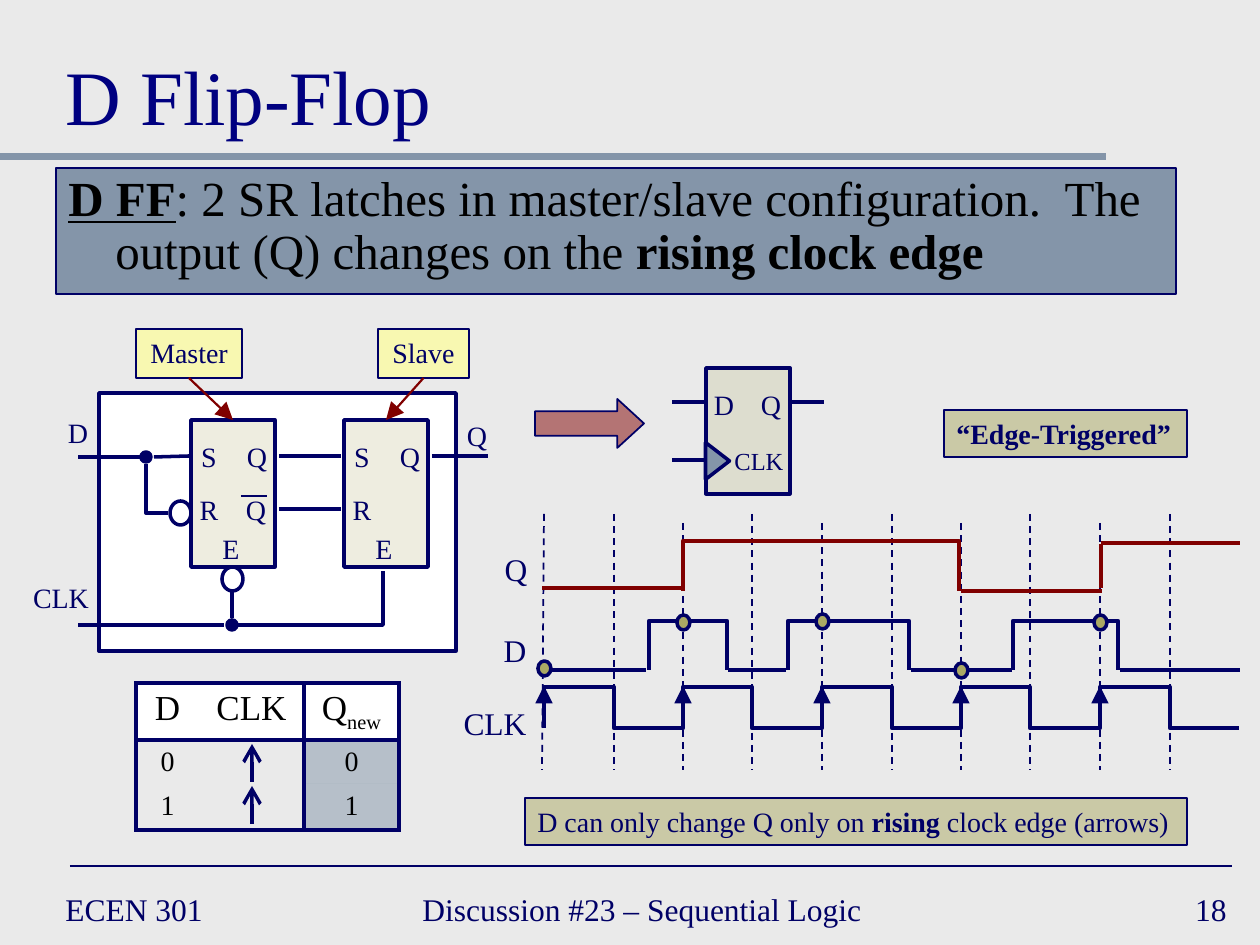
from dataclasses import dataclass

from lxml import etree
from pptx import Presentation
from pptx.dml.color import RGBColor
from pptx.enum.dml import MSO_LINE
from pptx.enum.shapes import MSO_CONNECTOR, MSO_SHAPE
from pptx.enum.text import MSO_ANCHOR, PP_ALIGN
from pptx.oxml.ns import qn
from pptx.util import Emu, Pt

RECT, OVAL = MSO_SHAPE.RECTANGLE, MSO_SHAPE.OVAL
TRIANGLE, RIGHT_ARROW = MSO_SHAPE.ISOSCELES_TRIANGLE, MSO_SHAPE.RIGHT_ARROW
STRAIGHT, DASH = MSO_CONNECTOR.STRAIGHT, MSO_LINE.DASH
LEFT, CENTER, RIGHT = PP_ALIGN.LEFT, PP_ALIGN.CENTER, PP_ALIGN.RIGHT
TOP, MIDDLE, BOTTOM = MSO_ANCHOR.TOP, MSO_ANCHOR.MIDDLE, MSO_ANCHOR.BOTTOM
PX = 914400 / 126


@dataclass(frozen=True)
class Theme:
    font: str = "Times New Roman"
    page: str = "EAEAEA"
    navy: str = "000066"
    title: str = "000080"
    slate: str = "8495A9"
    red: str = "800000"
    olive: str = "ABA964"
    yellow: str = "FFFF99"
    white: str = "FFFFFF"
    black: str = "000000"
    title_size: int = 44
    body_size: int = 28
    header_size: int = 20
    signal_size: int = 18
    label_size: int = 16
    small_size: int = 14


T = Theme()


def px(n):
    return Emu(round(n * PX))


def rgb(color):
    return RGBColor.from_string(color)


def paint(fill, xml, color, alpha=100):
    if color is None:
        fill.background()
        return
    fill.solid()
    fill.fore_color.rgb = rgb(color)
    if alpha < 100:
        clr = xml.find(qn("a:solidFill")).find(qn("a:srgbClr"))
        etree.SubElement(clr, qn("a:alpha")).set("val", str(alpha * 1000))


def write(tf, runs, size=T.label_size, color=T.navy, align=LEFT, anchor=TOP,
          wrap=False, hang=0, spacing=None):
    tf.word_wrap = wrap
    tf.vertical_anchor = anchor
    p = tf.paragraphs[0]
    p.alignment = align
    if spacing:
        p.line_spacing = spacing
    if hang:
        pPr = p._p.get_or_add_pPr()
        pPr.set("marL", str(px(hang)))
        pPr.set("indent", str(-px(hang)))
    for text, style in [(runs, "")] if isinstance(runs, str) else runs:
        r = p.add_run()
        r.text = text
        r.font.name = T.font
        r.font.size = Pt(size)
        r.font.color.rgb = rgb(color)
        r.font.bold = "b" in style
        r.font.underline = "u" in style
        if "s" in style:
            r.font._element.set("baseline", "-25000")


def add_text(s, box, runs, **fmt):
    write(s.shapes.add_textbox(*map(px, box)).text_frame, runs, **fmt)


def add_label(s, x, y, text, size=T.label_size):
    width = 26 + 22 * len(text)
    add_text(s, (x - width // 2, y, width, 46), text, size=size, align=CENTER)


def outline(sp, color, width):
    sp.line.color.rgb = rgb(color)
    sp.line.width = Pt(width)
    sp.shadow.inherit = False


def add_box(s, kind, box, color=None, alpha=100, width=2):
    sp = s.shapes.add_shape(kind, *map(px, box))
    paint(sp.fill, sp._element.spPr, color, alpha)
    outline(sp, T.navy, width)
    return sp


def add_line(s, x1, y1, x2, y2, color=T.navy, width=2, dash=None, tail=None):
    c = s.shapes.add_connector(STRAIGHT, px(x1), px(y1), px(x2), px(y2))
    c.line.color.rgb = rgb(color)
    c.line.width = Pt(width)
    if dash:
        c.line.dash_style = dash
    if tail:
        end = etree.SubElement(c.line._get_or_add_ln(), qn("a:tailEnd"))
        for key, value in (("type", tail), ("w", "lg"), ("len", "lg")):
            end.set(key, value)
    etree.SubElement(c._element.spPr, qn("a:effectLst"))
    return c


def add_path(s, points, color=T.navy, width=2.5):
    fb = s.shapes.build_freeform(*points[0], scale=PX)
    fb.add_line_segments(points[1:], close=False)
    sp = fb.convert_to_shape()
    sp.fill.background()
    outline(sp, color, width)


def add_borders(cell, sides):
    tcPr = cell._tc.get_or_add_tcPr()
    for side in "LRTB":
        ln = etree.SubElement(tcPr, qn(f"a:ln{side}"))
        if side in sides:
            ln.set("w", str(Pt(2.25)))
            fill = etree.SubElement(ln, qn("a:solidFill"))
            etree.SubElement(fill, qn("a:srgbClr")).set("val", T.navy)
        else:
            etree.SubElement(ln, qn("a:noFill"))


def add_truth_table(s):
    rows = [["D", "CLK", [("Q", ""), ("new", "s")]], ["0", "", "0"], ["1", "", "1"]]
    table = s.shapes.add_table(3, 3, *map(px, (136, 683, 263, 147))).table
    table.first_row = table.horz_banding = False
    for col, width in zip(table.columns, (63, 105, 95)):
        col.width = px(width)
    for row, height in zip(table.rows, (57, 44, 46)):
        row.height = px(height)
    col_sides, row_sides = ("L", "R", "LR"), ("TB", "T", "B")
    for i, row in enumerate(rows):
        for j, value in enumerate(row):
            cell = table.cell(i, j)
            add_borders(cell, col_sides[j] + row_sides[i])
            color = T.white if i == 0 else T.slate if j == 2 else None
            paint(cell.fill, cell._tc.tcPr, color, 50 if i else 100)
            cell.margin_bottom = 0
            if value:
                write(cell.text_frame, value, size=T.label_size if i else T.header_size,
                      color=T.black, align=CENTER, wrap=True)
            else:
                cell.margin_top = 0
    for y in (782, 824):
        add_line(s, 252, y, 252, y - 38, tail="arrow")


def add_latch(s, x):
    block = add_box(s, RECT, (x, 420, 84, 147), T.olive, 20)
    for dx, y, text in ((18, 433, "S"), (66, 433, "Q"), (18, 486, "R"), (40, 525, "E")):
        add_label(s, x + dx, y, text)
    return block


def add_callout(s, box, text, block):
    sp = add_box(s, RECT, box, T.yellow, 70, 1.5)
    write(sp.text_frame, text, align=CENTER)
    c = add_line(s, 0, 0, 1, 1, T.red, 1.25, tail="triangle")
    c.begin_connect(sp, 2)
    c.end_connect(block, 0)


def add_circuit(s):
    add_box(s, RECT, (99, 393, 357, 258), T.white)
    master, slave = add_latch(s, 191), add_latch(s, 344)
    add_label(s, 256, 486, "Q")
    add_line(s, 241, 496, 267, 496, width=1.5)
    for x, y in ((170, 501), (222, 567)):
        add_box(s, OVAL, (x, y, 21, 24))
    for x, y in ((227, 620), (141, 452)):
        add_box(s, OVAL, (x, y, 10, 10), T.navy)
    for wire in ((232, 592, 232, 618), (154, 457, 189, 456), (279, 509, 341, 509),
                 (279, 456, 341, 456), (224, 625, 78, 625), (140, 457, 78, 457),
                 (432, 456, 488, 456)):
        add_line(s, *wire)
    add_path(s, [(238, 625), (383, 625), (383, 571)], width=2)
    add_path(s, [(168, 513), (146, 513), (146, 464)], width=2)
    for x, y, text in ((61, 574, "CLK"), (78, 409, "D"), (477, 412, "Q")):
        add_label(s, x, y, text)
    add_callout(s, (136, 329, 106, 49), "Master", master)
    add_callout(s, (378, 329, 91, 49), "Slave", slave)


def add_symbol(s):
    add_box(s, RIGHT_ARROW, (535, 399, 109, 49), T.red, 50, 1).adjustments[1] = 0.545
    add_box(s, RECT, (706, 368, 84, 126), T.olive, 20)
    add_box(s, TRIANGLE, (699, 449, 37, 24), T.slate).rotation = 90
    for wire in ((706, 402, 672, 402), (706, 460, 672, 460), (824, 402, 790, 402)):
        add_line(s, *wire)
    add_label(s, 724, 381, "D")
    add_label(s, 771, 381, "Q")
    add_label(s, 759, 440, "CLK", T.small_size)


def add_timing(s):
    edges = [544 + round(69.5 * i) for i in range(11)]
    clock = [(edges[0], 728)]
    for i, x in enumerate(edges[:-1]):
        y = 728 if i % 2 else 687
        clock += [(x, y), (edges[i + 1], y)]
        top = 523 if i and i % 2 == 0 else 514
        add_line(s, x, top, x if i else x - 2, 770, width=1, dash=DASH)
    add_path(s, clock)
    for x, y, text in ((495, 698, "CLK"), (515, 625, "D"), (516, 544, "Q")):
        add_label(s, x, y, text, T.signal_size)
    for x1, x2 in ((649, 727), (788, 909), (1013, 1118)):
        add_path(s, [(x1, 670), (x1, 621), (x2, 621), (x2, 670)])
    for x1, x2 in ((544, 646), (728, 786), (911, 1012), (1120, 1240)):
        add_line(s, x1, 670, x2, 670)
    for q in ((683, 588, 542, 588), (961, 591, 1102, 591),
              (1101, 588, 1101, 544), (1101, 543, 1240, 543)):
        add_line(s, *q, T.red, 2.5)
    add_path(s, [(683, 591), (683, 541), (959, 541), (959, 591)], T.red)
    for x, y in zip(edges[::2], (668, 622, 621, 670, 622)):
        add_line(s, x, 727, x, 686, width=1.25, tail="triangle")
        add_box(s, OVAL, (x - 6, y - 7, 13, 15), T.olive)


def add_note(s, box, runs):
    write(add_box(s, RECT, box, T.olive, 50, 1.5).text_frame, runs, wrap=True)


def main():
    prs = Presentation()
    prs.slide_width, prs.slide_height = px(1260), px(945)
    s = prs.slides.add_slide(prs.slide_layouts[6])
    s.background.fill.solid()
    s.background.fill.fore_color.rgb = rgb(T.page)
    add_line(s, 0, 157, 1106, 157, T.slate, 4)
    add_line(s, 70, 866, 1232, 866, width=1)
    for x, w, text, align in ((53, 273, "ECEN 301", LEFT), (977, 262, "18", RIGHT),
                              (410, 483, "Discussion #23 – Sequential Logic", LEFT)):
        add_text(s, (x, 882, w, 53), text, size=T.signal_size, align=align,
                 anchor=MIDDLE, wrap=True)
    add_text(s, (53, 21, 1155, 126), "D Flip-Flop", size=T.title_size,
             color=T.title, anchor=BOTTOM, wrap=True)
    body = add_box(s, RECT, (56, 168, 1120, 126), T.slate, width=0.75)
    write(body.text_frame, [
        ("D FF", "bu"),
        (": 2 SR latches in master/slave configuration.  The output (Q) changes on the ", ""),
        ("rising clock edge", "b")],
        size=T.body_size, color=T.black, wrap=True, hang=47, spacing=0.9)
    add_truth_table(s)
    add_symbol(s)
    add_circuit(s)
    add_timing(s)
    add_note(s, (525, 798, 662, 47), [("D can only change Q only on ", ""), ("rising", "b"),
                                      (" clock edge (arrows)", "")])
    add_note(s, (944, 410, 243, 47), [("“Edge-Triggered”", "b")])
    prs.save("out.pptx")


if __name__ == "__main__":
    main()
